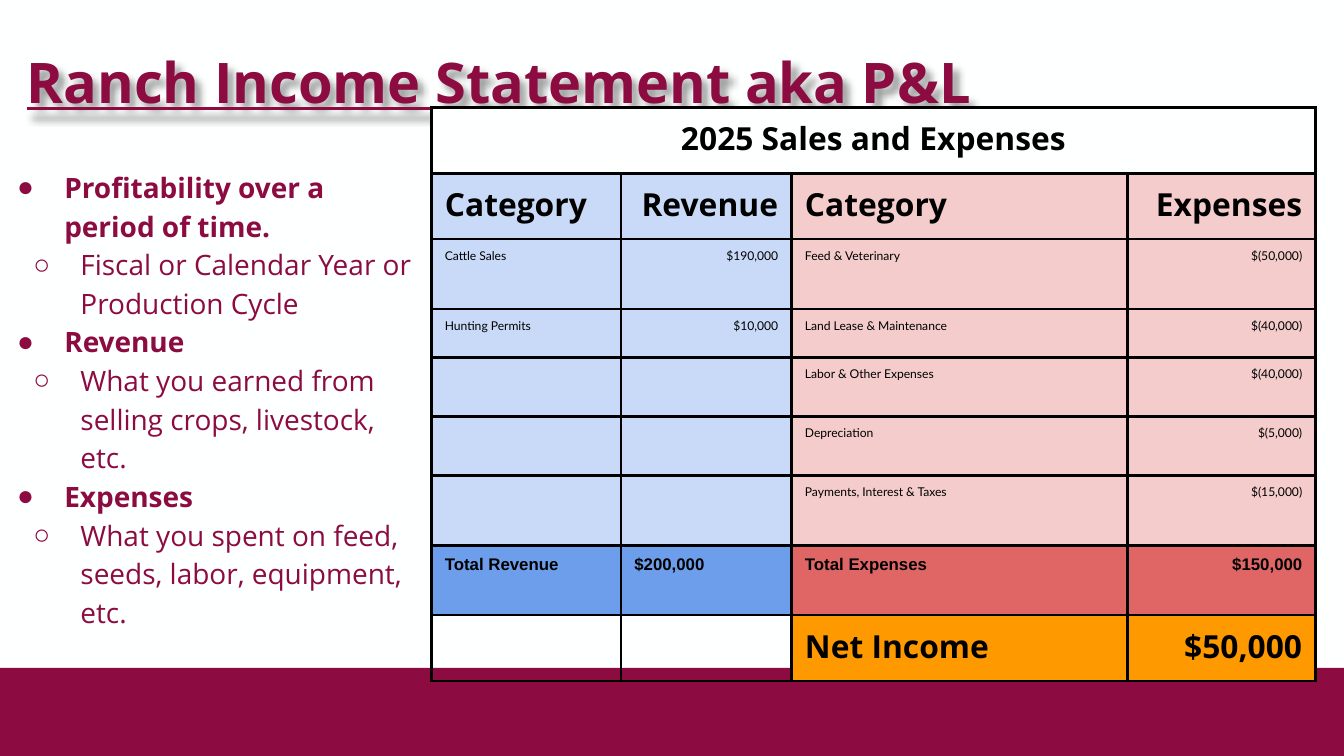
from dataclasses import dataclass

from lxml import etree
from pptx import Presentation
from pptx.dml.color import RGBColor
from pptx.enum.shapes import MSO_SHAPE
from pptx.enum.text import MSO_ANCHOR, PP_ALIGN
from pptx.oxml.ns import qn
from pptx.util import Inches, Pt

RECT = MSO_SHAPE.RECTANGLE
MIDDLE = MSO_ANCHOR.MIDDLE
LEFT, CENTER, RIGHT = PP_ALIGN.LEFT, PP_ALIGN.CENTER, PP_ALIGN.RIGHT


@dataclass(frozen=True)
class Theme:
    maroon: str = "8C0B41"
    paper: str = "FEFFFF"
    ink: str = "000000"
    blue: str = "C9DAF8"
    blue_total: str = "6D9EEB"
    red: str = "F4CCCC"
    red_total: str = "E06666"
    net: str = "FF9900"
    heading: str = "Open Sans"
    plain: str = "Arial"
    title_size: float = 30
    body_size: float = 15
    head_size: float = 17
    item_size: float = 6.5
    total_size: float = 9
    empty_size: float = 18
    border: float = 1.5


T = Theme()

BULLETS = [
    ("Profitability over a period of time.",
     "Fiscal or Calendar Year or Production Cycle"),
    ("Revenue", "What you earned from selling crops, livestock, etc."),
    ("Expenses", "What you spent on feed, seeds, labor, equipment, etc."),
]

COLS = [1.41, 1.27, 2.5, 1.4]
ITEM_ROWS = [
    (0.52, ["Cattle Sales", "$190,000", "Feed & Veterinary", "$(50,000)"]),
    (0.36, ["Hunting Permits", "$10,000", "Land Lease & Maintenance", "$(40,000)"]),
    (0.36, ["", "", "Labor & Other Expenses", "$(40,000)"]),
    (0.36, ["", "", "Depreciation", "$(5,000)"]),
    (0.52, ["", "", "Payments, Interest & Taxes", "$(15,000)"]),
]

# Row styles: font, size, bold, fills and alignments by column
HEAD = (T.heading, T.head_size, True)
ITEM = ("Lato", T.item_size, False)
TOTAL = (T.plain, T.total_size, True)
LIGHT = [T.blue] * 2 + [T.red] * 2
DARK = [T.blue_total] * 2 + [T.red_total] * 2
SIDES = [LEFT, RIGHT] * 2

ROWS = [
    (0.49, ["2025 Sales and Expenses", "", "", ""], HEAD, [T.paper] * 4, [CENTER] * 4),
    (0.49, ["Category", "Revenue", "Category", "Expenses"], HEAD, LIGHT, SIDES),
    *[(height, texts, ITEM, LIGHT, SIDES) for height, texts in ITEM_ROWS],
    (0.52, ["Total Revenue", "$200,000", "Total Expenses", "$150,000"],
     TOTAL, DARK, [LEFT, LEFT, LEFT, RIGHT]),
    (0.49, ["", "", "Net Income", "$50,000"], HEAD, [None, None, T.net, T.net], SIDES),
]


def rgb(color):
    return RGBColor.from_string(color)


def add_xml(parent, tag, **attrs):
    return etree.SubElement(parent, qn(tag), attrs)


def set_font(p, name, size, color, bold):
    font = p.font
    font.name, font.size, font.bold = name, Pt(size), bold
    font.color.rgb = rgb(color)


def add_text_box(slide, box, inset_y):
    sp = slide.shapes.add_textbox(*map(Inches, box))
    tf = sp.text_frame
    tf.word_wrap = True
    tf.margin_left = tf.margin_right = Inches(0.1)
    tf.margin_top = tf.margin_bottom = Inches(inset_y)
    return sp, tf


def add_footer(slide, box):
    sp = slide.shapes.add_shape(RECT, *map(Inches, box))
    sp.shadow.inherit = False
    sp.fill.solid()
    sp.fill.fore_color.rgb = rgb(T.maroon)
    sp.line.fill.background()


def add_title(slide, box):
    sp, tf = add_text_box(slide, box, 0.1)
    p = tf.paragraphs[0]
    p.text = "Ranch Income Statement aka P&L"
    p.line_spacing = 1.5
    p._p.get_or_add_pPr().set("marL", str(Inches(0.1)))
    set_font(p, T.heading, T.title_size, T.maroon, True)
    p.font.underline = True
    # Soft shadow under the lettering
    effects = add_xml(sp._element.spPr, "a:effectLst")
    shadow = add_xml(effects, "a:outerShdw", blurRad=str(Inches(0.06)),
                     dist=str(Inches(0.05)), dir="3000000", algn="bl", rotWithShape="0")
    color = add_xml(shadow, "a:srgbClr", val=T.ink)
    add_xml(color, "a:alpha", val="40000")


def add_borders(cell):
    tc_pr = cell._tc.get_or_add_tcPr()
    for i, side in enumerate(("a:lnL", "a:lnR", "a:lnT", "a:lnB")):
        ln = etree.Element(qn(side), w=str(Pt(T.border)))
        add_xml(add_xml(ln, "a:solidFill"), "a:srgbClr", val=T.ink)
        tc_pr.insert(i, ln)


def fill_cell(cell, text, style, fill, align):
    cell.margin_left = cell.margin_right = Inches(0.1)
    cell.margin_top = cell.margin_bottom = Inches(0.07)
    if fill:
        cell.fill.solid()
        cell.fill.fore_color.rgb = rgb(fill)
    else:
        cell.fill.background()
    add_borders(cell)
    p = cell.text_frame.paragraphs[0]
    if text:
        name, size, bold = style
        p.text = text
        p.alignment = align
        set_font(p, name, size, T.ink, bold)
    else:
        # The type size of an empty cell sets its least height
        end = add_xml(p._p, "a:endParaRPr", sz=str(T.empty_size * 100))
        add_xml(end, "a:latin", typeface=T.plain)


def add_income_table(slide, left, top):
    height = sum(row[0] for row in ROWS)
    frame = slide.shapes.add_table(len(ROWS), len(COLS), Inches(left), Inches(top),
                                   Inches(sum(COLS)), Inches(height))
    table = frame.table
    table.first_row = table.horz_banding = False
    for column, width in zip(table.columns, COLS):
        column.width = Inches(width)
    for r, (row_height, texts, style, fills, aligns) in enumerate(ROWS):
        table.rows[r].height = Inches(row_height)
        for c, (text, fill, align) in enumerate(zip(texts, fills, aligns)):
            fill_cell(table.cell(r, c), text, style, fill, align)
    table.cell(0, 0).merge(table.cell(0, len(COLS) - 1))


def add_bullet(p, text, level):
    p.text = text
    p.level = level
    p_pr = p._p.get_or_add_pPr()
    p_pr.set("marL", str(Inches((0.38, 0.5)[level])))
    p_pr.set("indent", str(Inches(-0.35)))
    add_xml(add_xml(p_pr, "a:buClr"), "a:srgbClr", val=T.maroon)
    add_xml(p_pr, "a:buFont", typeface=T.plain)
    add_xml(p_pr, "a:buChar", char="●○"[level])
    p.line_spacing = 1.15
    set_font(p, T.heading, T.body_size, T.maroon, level == 0)


def add_definitions(slide, box):
    _, tf = add_text_box(slide, box, 0.05)
    tf.vertical_anchor = MIDDLE
    lines = [(text, level) for pair in BULLETS for level, text in enumerate(pair)]
    for i, (text, level) in enumerate(lines):
        p = tf.add_paragraph() if i else tf.paragraphs[0]
        add_bullet(p, text, level)


def main():
    prs = Presentation()
    prs.slide_width = Inches(10)
    prs.slide_height = prs.slide_width * 9 // 16
    slide = prs.slides.add_slide(prs.slide_layouts[6])
    slide.background.fill.solid()
    slide.background.fill.fore_color.rgb = rgb(T.paper)
    add_footer(slide, (0, 4.97, 10, 0.66))
    add_title(slide, (0, 0, 10, 0.75))
    add_income_table(slide, 3.21, 0.8)
    add_definitions(slide, (0, 0.75, 3.21, 4.41))
    prs.save("out.pptx")


if __name__ == "__main__":
    main()
